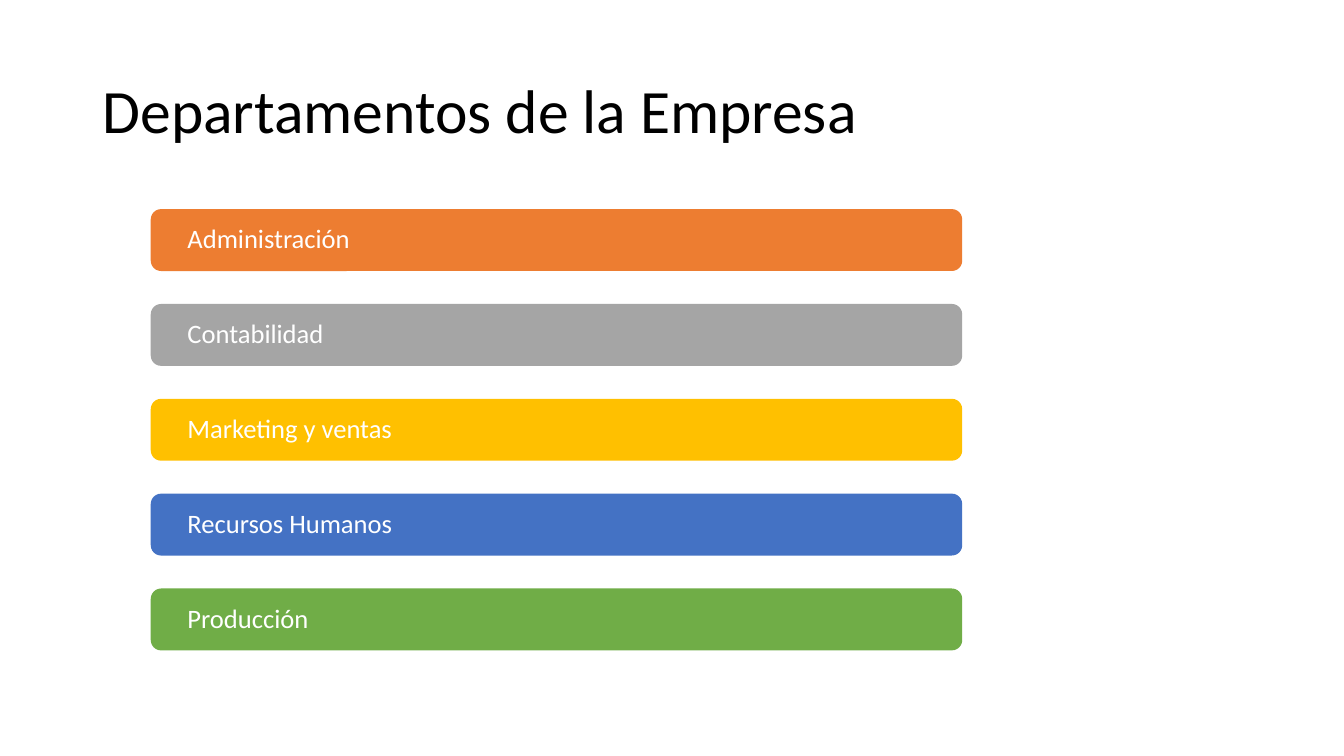
from pptx import Presentation
from pptx.dml.color import RGBColor
from pptx.enum.shapes import MSO_SHAPE
from pptx.enum.text import MSO_ANCHOR, MSO_AUTO_SIZE, PP_ALIGN
from pptx.util import Cm, Pt

DEPARTMENTS = [
    ("Administración", "ED7D31"),
    ("Contabilidad", "A5A5A5"),
    ("Marketing y ventas", "FFC000"),
    ("Recursos Humanos", "4472C4"),
    ("Producción", "70AD47"),
]
FIRST_TOP = 5.27
PITCH = 2.39


def color(hex_code):
    return RGBColor.from_string(hex_code)


class DepartmentSlide:
    """Holds the style and the current slide, and adds its elements."""

    font_name = "Calibri"
    title_color = "000000"
    label_color = "FFFFFF"

    def __init__(self, presentation):
        self.slide = presentation.slides.add_slide(presentation.slide_layouts[5])

    def set_text(self, frame, text, size, hex_code):
        frame.text = text
        frame.word_wrap = True
        frame.auto_size = MSO_AUTO_SIZE.NONE
        frame.vertical_anchor = MSO_ANCHOR.MIDDLE
        paragraph = frame.paragraphs[0]
        paragraph.alignment = PP_ALIGN.LEFT
        paragraph.line_spacing = 0.9
        paragraph.font.name = self.font_name
        paragraph.font.size = Pt(size)
        paragraph.font.color.rgb = color(hex_code)

    def add_title(self, text):
        title = self.slide.shapes.title
        title.left, title.top = Cm(2.33), Cm(1.01)
        title.width, title.height = Cm(29.21), Cm(3.68)
        self.set_text(title.text_frame, text, 44, self.title_color)

    def add_bar(self, department, fill, top):
        bar = self.slide.shapes.add_shape(
            MSO_SHAPE.ROUNDED_RECTANGLE, Cm(3.8), Cm(top), Cm(20.45), Cm(1.56)
        )
        bar.shadow.inherit = False
        bar.fill.solid()
        bar.fill.fore_color.rgb = color(fill)
        bar.line.fill.background()
        frame = bar.text_frame
        frame.margin_left = frame.margin_right = Cm(0.85)
        frame.margin_top = frame.margin_bottom = 0
        self.set_text(frame, department, 19, self.label_color)


def main():
    presentation = Presentation()
    presentation.slide_width, presentation.slide_height = Cm(33.87), Cm(19.05)
    page = DepartmentSlide(presentation)
    page.add_title("Departamentos de la Empresa")
    for row, (department, fill) in enumerate(DEPARTMENTS):
        page.add_bar(department, fill, FIRST_TOP + row * PITCH)
    presentation.save("out.pptx")


if __name__ == "__main__":
    main()
